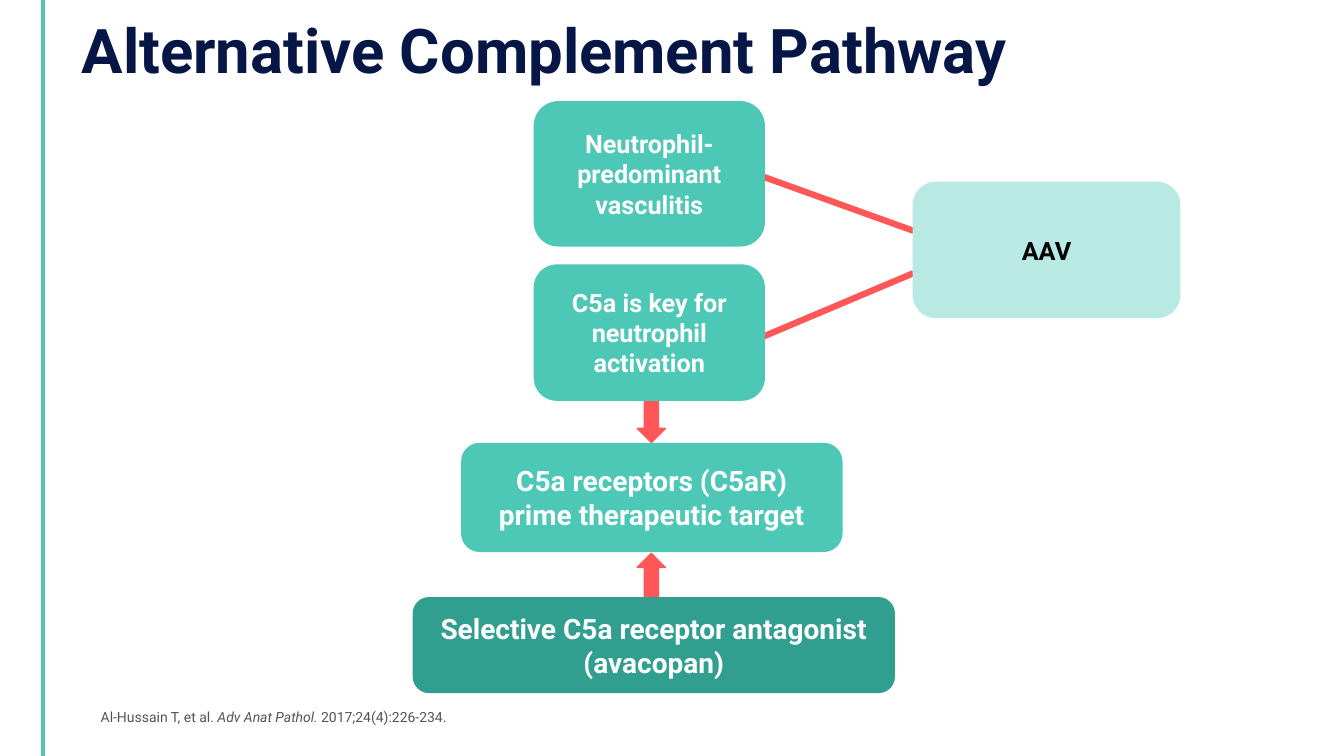
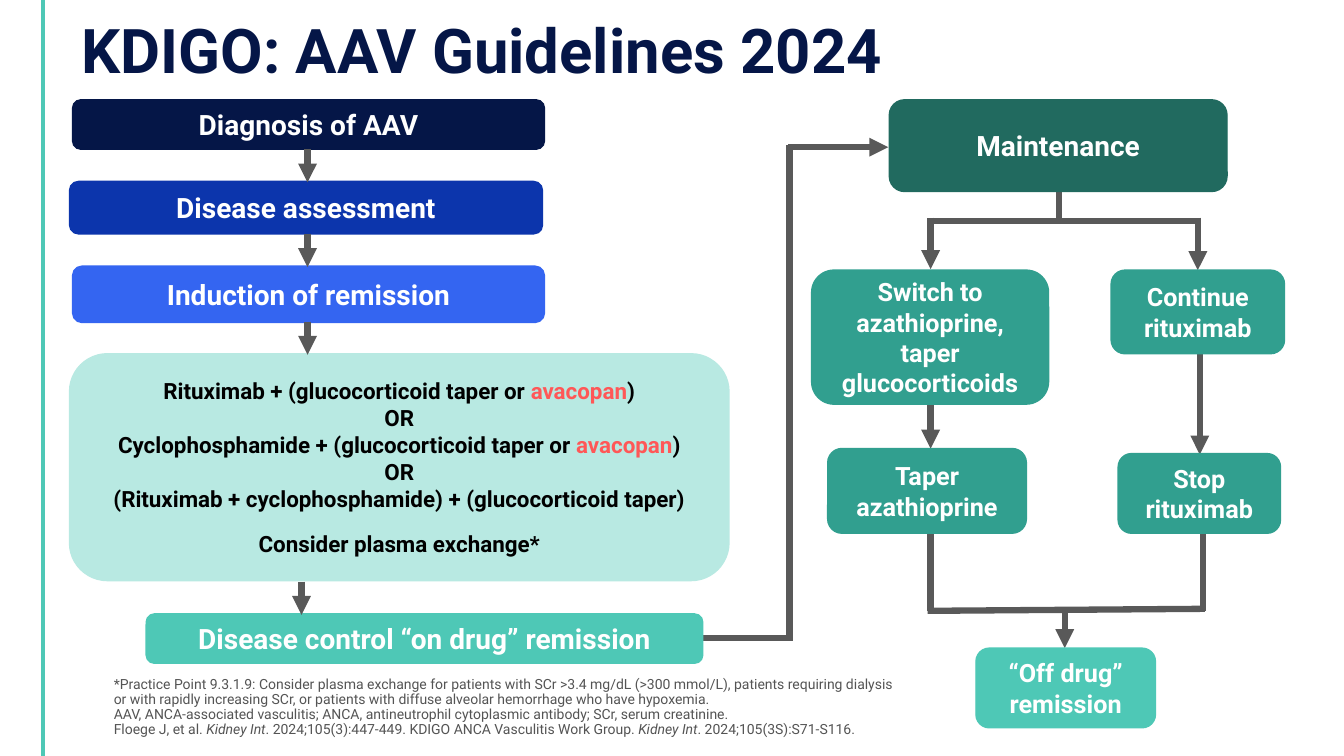
from dataclasses import dataclass
from typing import Any

from lxml.etree import SubElement
from pptx import Presentation
from pptx.dml.color import RGBColor
from pptx.enum.shapes import MSO_CONNECTOR, MSO_SHAPE
from pptx.enum.text import MSO_ANCHOR, PP_ALIGN
from pptx.oxml.ns import qn
from pptx.util import Inches, Pt

SLIDE_WIDTH, SLIDE_HEIGHT = 13.33, 7.5
FONT = "Roboto"
COLORS = {
    "navy": "051647",
    "blue": "0C35AC",
    "bright_blue": "3465F1",
    "dark_teal": "216A5F",
    "teal": "319F8F",
    "mint": "4EC8B6",
    "pale_mint": "B8E9E2",
    "coral": "FF5757",
    "line_gray": "595959",
    "note_gray": "545454",
    "white": "FFFFFF",
    "black": "000000",
}


def color(name):
    return RGBColor.from_string(COLORS[name])


@dataclass
class Region:
    """A box on a slide, in inches, divided into columns and rows."""

    slide: Any
    left: float
    top: float
    width: float
    height: float
    columns: float
    rows: float

    def x(self, column):
        return Inches(self.left + column * self.width / self.columns)

    def y(self, row):
        return Inches(self.top + row * self.height / self.rows)

    def place(self, column, row, column_span, row_span):
        left, top = self.x(column), self.y(row)
        return left, top, self.x(column + column_span) - left, self.y(row + row_span) - top


def write_text(frame, paragraphs, size, color_name, bold=False,
               alignment=PP_ALIGN.LEFT, line_spacing=None, emphasize=None):
    """Write paragraphs; text between bars is passed to emphasize."""
    for index, text in enumerate(paragraphs):
        paragraph = frame.paragraphs[0] if index == 0 else frame.add_paragraph()
        paragraph.alignment = alignment
        if line_spacing:
            paragraph.line_spacing = line_spacing
        font = paragraph.font
        font.name, font.size, font.bold = FONT, Pt(size), bold
        font.color.rgb = color(color_name)
        for part, words in enumerate(text.split("|")):
            run = paragraph.add_run()
            run.text = words
            if part % 2:
                emphasize(run.font)


def make_italic(font):
    font.italic = True


def make_coral(font):
    font.color.rgb = color("coral")


def add_filled_shape(region, kind, cell, fill):
    shape = region.slide.shapes.add_shape(kind, *region.place(*cell))
    shape.shadow.inherit = False
    shape.fill.solid()
    shape.fill.fore_color.rgb = color(fill)
    shape.line.color.rgb = color(fill)
    shape.line.width = Pt(1)
    return shape


def add_box(region, cell, fill, *paragraphs, size=18, text_color="white", emphasize=None):
    shape = add_filled_shape(region, MSO_SHAPE.ROUNDED_RECTANGLE, cell, fill)
    frame = shape.text_frame
    frame.word_wrap = True
    frame.vertical_anchor = MSO_ANCHOR.MIDDLE
    write_text(frame, paragraphs, size, text_color, bold=True,
               alignment=PP_ALIGN.CENTER, emphasize=emphasize)
    return shape


def add_line(region, start, end, arrow=False, line_color="line_gray", width=4.5):
    connector = region.slide.shapes.add_connector(
        MSO_CONNECTOR.STRAIGHT,
        region.x(start[0]), region.y(start[1]), region.x(end[0]), region.y(end[1]))
    connector.line.color.rgb = color(line_color)
    connector.line.width = Pt(width)
    if arrow:
        SubElement(connector.line._get_or_add_ln(), qn("a:tailEnd"), type="triangle")
    SubElement(connector.element.spPr, qn("a:effectLst"))
    return connector


def add_note(region, paragraphs, wrap, line_spacing=None):
    box = region.slide.shapes.add_textbox(*region.place(0, 0, region.columns, region.rows))
    box.text_frame.word_wrap = wrap
    write_text(box.text_frame, paragraphs, 10, "note_gray",
               line_spacing=line_spacing, emphasize=make_italic)


def prepare_layout(layout):
    """Place the title and the side rule that all slides share."""
    title = layout.placeholders[0]
    title.left, title.top = Inches(0.71), Inches(-0.04)
    title.width, title.height = Inches(11.5), Inches(1.14)
    title.text_frame.vertical_anchor = MSO_ANCHOR.MIDDLE


def add_titled_slide(presentation, layout, title):
    slide = presentation.slides.add_slide(layout)
    write_text(slide.shapes.title.text_frame, [title], 44, "navy", bold=True, line_spacing=0.9)
    return slide


def add_side_rule(slide, layout):
    """Draw the vertical rule and move it to the layout."""
    page = Region(slide, 0, 0, SLIDE_WIDTH, SLIDE_HEIGHT, SLIDE_WIDTH, 1)
    rule = add_line(page, (0.43, 0), (0.43, 1), line_color="mint", width=3)
    layout.shapes.element.append(rule.element)


def draw_complement_pathway(region):
    for kind, row in ((MSO_SHAPE.DOWN_ARROW, 29.4), (MSO_SHAPE.UP_ARROW, 44.9)):
        add_filled_shape(region, kind, (22.2, row, 2.8, 4.5), "coral")
    for start_row, end_row in ((7.1, 12.9), (23.9, 17.1)):
        add_line(region, (33.5, start_row), (49.6, end_row), line_color="coral")
    add_box(region, (12, 0.1, 22.8, 14.3), "mint", "Neutrophil-predominant vasculitis")
    add_box(region, (12, 16.3, 22.8, 13.4), "mint", "C5a is key for neutrophil activation")
    add_box(region, (4.8, 34, 37.7, 10.7), "mint",
            "C5a receptors (C5aR) prime therapeutic target", size=20)
    add_box(region, (0, 49.3, 47.7, 9.4), "teal",
            "Selective C5a receptor antagonist", "(avacopan)", size=20)
    add_box(region, (49.6, 8.1, 26.4, 13.4), "pale_mint", "AAV", text_color="black")


def draw_induction(region):
    steps = [
        ((0.3, 0, 46.8, 4.9), "navy", "Diagnosis of AAV"),
        ((0, 8.1, 46.9, 5.2), "blue", "Disease assessment"),
        ((0.3, 16.5, 46.8, 5.6), "bright_blue", "Induction of remission"),
        ((7.6, 51, 55.2, 4.9), "mint", "Disease control “on drug” remission"),
    ]
    for cell, fill, text in steps:
        add_box(region, cell, fill, text, size=20)
    regimens = add_box(
        region, (0, 25.2, 65.4, 22.5), "pale_mint",
        "Rituximab + (glucocorticoid taper or |avacopan|)",
        "OR",
        "Cyclophosphamide + (glucocorticoid taper or |avacopan|)",
        "OR",
        "(Rituximab + cyclophosphamide) + (glucocorticoid taper)",
        "Consider plasma exchange*",
        size=16, text_color="black", emphasize=make_coral)
    regimens.text_frame.paragraphs[-1].space_before = Pt(13)
    for column, start_row in ((23.6, 4.9), (23.6, 13.3), (23.6, 22), (23, 47.8)):
        add_line(region, (column, start_row), (column, start_row + 3.3), arrow=True)


def draw_bridge(region):
    """Link the end of induction to the start of maintenance."""
    add_line(region, (0, 49.3), (10, 49.3))
    add_line(region, (10, 0.4), (10, 49.6))
    add_line(region, (9.9, 0.6), (19.8, 0.6), arrow=True)


def draw_maintenance(region):
    left, right = 14.3, 40.8
    lines = [
        ((27, 9.1), (27, 11.8)),
        ((right, 12), (14, 12)),
        ((left, 41.5), (left, 50.7)),
        ((41.3, 43), (41.3, 50.7)),
        ((41.5, 50.5), (14, 50.7)),
    ]
    arrows = [
        ((left, 11.7), (left, 16.8)),
        ((right, 11.7), (right, 16.9)),
        ((left, 28.5), (left, 34.6)),
        ((41, 23.8), (41, 35.2)),
        ((27.6, 50.5), (27.6, 54.4)),
    ]
    for group, arrow in ((lines, False), (arrows, True)):
        for start, end in group:
            add_line(region, start, end, arrow)
    add_box(region, (10.2, 0, 33.5, 9.1), "dark_teal", "Maintenance", size=20)
    add_box(region, (2.5, 16.9, 23.5, 13.3), "teal",
            "Switch to azathioprine,", "taper glucocorticoids")
    add_box(region, (32.2, 16.9, 17.2, 8.3), "teal", "Continue rituximab")
    add_box(region, (4.1, 34.6, 19.7, 8.4), "teal", "Taper azathioprine")
    add_box(region, (32.9, 35.1, 16.1, 7.9), "teal", "Stop rituximab")
    add_box(region, (18.8, 54.4, 17.8, 7.9), "mint", "“Off drug” remission")


def build_pathway_slide(presentation, layout):
    slide = add_titled_slide(presentation, layout, "Alternative Complement Pathway")
    draw_complement_pathway(Region(slide, 4.1, 1, 7.6, 5.9, 76, 59))
    add_note(Region(slide, 0.9, 6.98, 3.79, 0.27, 1, 1),
             ["Al-Hussain T, et al. |Adv Anat Pathol. |2017;24(4):226-234."], wrap=False)
    return slide


def build_guidelines_slide(presentation, layout):
    slide = add_titled_slide(presentation, layout, "KDIGO: AAV Guidelines 2024")
    draw_bridge(Region(slide, 6.83, 1.4, 2, 5, 20, 50))
    draw_induction(Region(slide, 0.69, 0.99, 6.6, 5.6, 66, 56))
    draw_maintenance(Region(slide, 7.8, 0.99, 5, 6.3, 50, 63))
    add_note(Region(slide, 1.03, 6.67, 8.71, 0.73, 1, 1), [
        "*Practice Point 9.3.1.9: Consider plasma exchange for patients with SCr >3.4 mg/dL "
        "(>300 mmol/L), patients requiring dialysis",
        "or with rapidly increasing SCr, or patients with diffuse alveolar hemorrhage "
        "who have hypoxemia.",
        "AAV, ANCA-associated vasculitis; ANCA, antineutrophil cytoplasmic antibody; "
        "SCr, serum creatinine.",
        "Floege J, et al. |Kidney Int|. 2024;105(3):447-449. KDIGO ANCA Vasculitis Work Group. "
        "|Kidney Int|. 2024;105(3S):S71-S116.",
    ], wrap=True, line_spacing=0.9)


def main():
    presentation = Presentation()
    presentation.slide_width = Inches(SLIDE_WIDTH)
    presentation.slide_height = Inches(SLIDE_HEIGHT)
    layout = presentation.slide_layouts.get_by_name("Title Only")
    prepare_layout(layout)
    first_slide = build_pathway_slide(presentation, layout)
    add_side_rule(first_slide, layout)
    build_guidelines_slide(presentation, layout)
    presentation.save("out.pptx")


if __name__ == "__main__":
    main()
